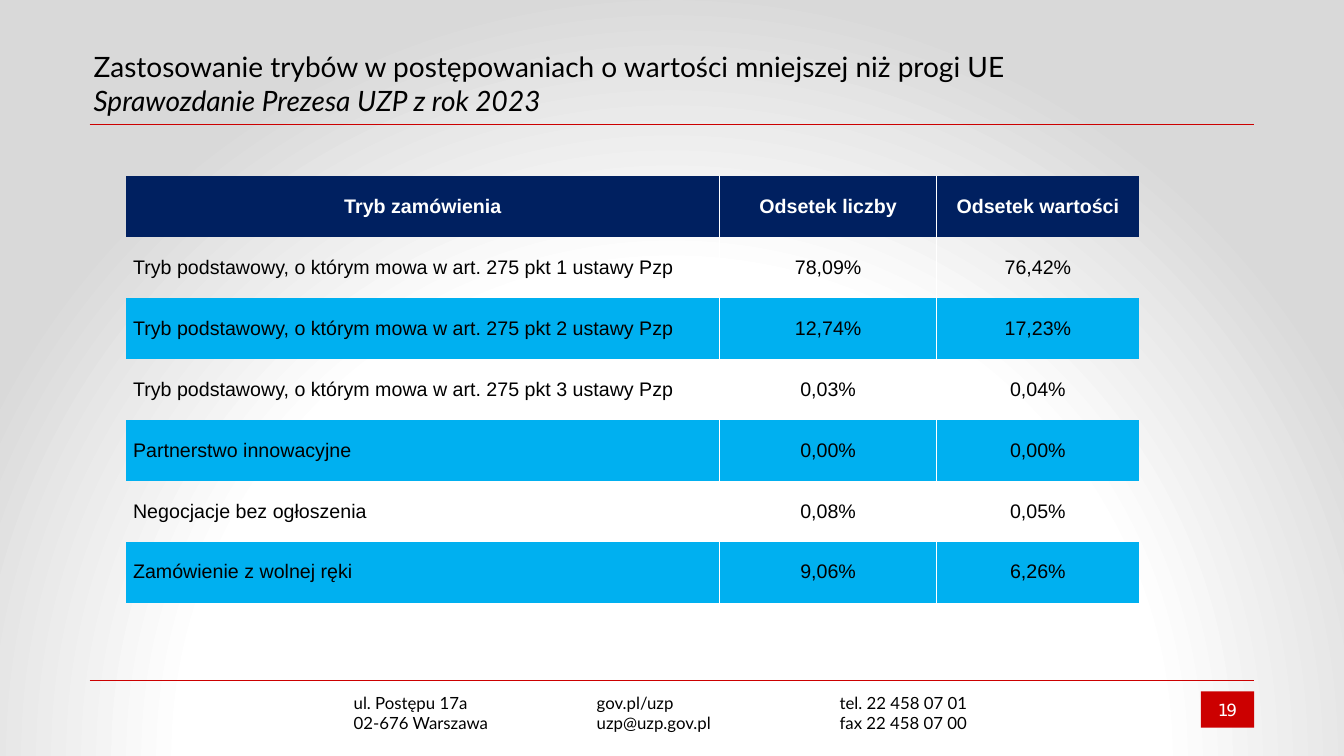
from dataclasses import dataclass

from lxml import etree
from pptx import Presentation
from pptx.dml.color import RGBColor
from pptx.enum.shapes import MSO_CONNECTOR, MSO_SHAPE
from pptx.enum.text import MSO_ANCHOR as Anchor, PP_ALIGN as Align
from pptx.oxml import parse_xml
from pptx.oxml.ns import nsdecls, qn
from pptx.util import Inches, Pt

SLIDE_W, SLIDE_H = 13.33, 7.5
NO_STYLE = "{2D5ABB26-0587-4C30-8999-92F81FD0307C}"


@dataclass(frozen=True)
class Theme:
    red: str = "CC0000"
    navy: str = "002060"
    blue: str = "00B0F0"
    black: str = "000000"
    white: str = "FFFFFF"
    grey: str = "D9D9D9"
    title_font: str = "Lato"
    table_font: str = "Arial"
    number_font: str = "DejaVu Sans"
    title_size: int = 20
    table_size: int = 14
    footer_size: int = 12


THEME = Theme()

TITLE = ["Zastosowanie trybów w postępowaniach o wartości mniejszej niż progi UE",
         "Sprawozdanie Prezesa UZP z rok 2023"]
ROWS = [
    ("Tryb zamówienia", "Odsetek liczby", "Odsetek wartości"),
    ("Tryb podstawowy, o którym mowa w art. 275 pkt 1 ustawy Pzp", "78,09%", "76,42%"),
    ("Tryb podstawowy, o którym mowa w art. 275 pkt 2 ustawy Pzp", "12,74%", "17,23%"),
    ("Tryb podstawowy, o którym mowa w art. 275 pkt 3 ustawy Pzp", "0,03%", "0,04%"),
    ("Partnerstwo innowacyjne", "0,00%", "0,00%"),
    ("Negocjacje bez ogłoszenia", "0,08%", "0,05%"),
    ("Zamówienie z wolnej ręki", "9,06%", "6,26%"),
]
COLUMN_SHARES = (0.586, 0.214, 0.2)
CONTACTS = [
    ("ul. Postępu 17a", "02-676 Warszawa"),
    ("gov.pl/uzp", "uzp@uzp.gov.pl"),
    ("tel. 22 458 07 01", "fax 22 458 07 00"),
]


def style_font(font, name, size, color, bold=False):
    font.name, font.size, font.bold = name, Pt(size), bold
    font.color.rgb = RGBColor.from_string(color)


def add_background(s):
    s.background.fill.gradient()
    grad = s._element.find(".//" + qn("a:gradFill"))
    stops = "".join(
        f'<a:gs pos="{share * 1000}"><a:srgbClr val="{color}"/></a:gs>'
        for share, color in ((0, THEME.white), (63, THEME.white), (100, THEME.grey)))
    grad.getparent().replace(grad, parse_xml(
        f'<a:gradFill {nsdecls("a")} rotWithShape="1"><a:gsLst>{stops}</a:gsLst>'
        '<a:path path="circle"><a:fillToRect l="50000" t="130000" r="50000" b="-30000"/>'
        '</a:path></a:gradFill>'))


def add_rule(s, left, top, width):
    line = s.shapes.add_connector(MSO_CONNECTOR.STRAIGHT, Inches(left), Inches(top),
                                  Inches(left + width), Inches(top))
    line.line.color.rgb = RGBColor.from_string(THEME.red)
    line.line.width = Pt(0.25)
    etree.SubElement(line._element.spPr, qn("a:effectLst"))


def add_lines(s, box, lines, size, anchor=Anchor.TOP):
    sp = s.shapes.add_textbox(*map(Inches, box))
    tf = sp.text_frame
    tf.word_wrap, tf.vertical_anchor = True, anchor
    tf.text = "\n".join(lines)
    for p in tf.paragraphs:
        style_font(p.runs[0].font, THEME.title_font, size, THEME.black)
    return tf


def add_header(s, left, top, width, height):
    margin = 0.06
    tf = add_lines(s, (left - margin, top, width + 2 * margin, height), TITLE,
                   THEME.title_size, Anchor.BOTTOM)
    tf.paragraphs[-1].runs[0].font.italic = True
    add_rule(s, left, top + height + 0.02, width)


def add_side_border(cell, side):
    border = parse_xml(
        f'<a:{side} {nsdecls("a")} w="12700"><a:solidFill><a:srgbClr val="{THEME.white}"/>'
        f'</a:solidFill></a:{side}>')
    cell._tc.get_or_add_tcPr().insert(0, border)


def fill_cell(cell, text, row, col):
    # Header is navy, then rows alternate between clear and blue
    if row and row % 2:
        cell.fill.background()
    else:
        cell.fill.solid()
        cell.fill.fore_color.rgb = RGBColor.from_string(THEME.blue if row else THEME.navy)
    cell.margin_left = cell.margin_right = Inches(0.07)
    cell.margin_top = cell.margin_bottom = 0
    cell.vertical_anchor = Anchor.MIDDLE
    cell.text = text
    p = cell.text_frame.paragraphs[0]
    p.alignment = Align.LEFT if row and col == 0 else Align.CENTER
    style_font(p.runs[0].font, THEME.table_font, THEME.table_size,
               THEME.black if row else THEME.white, bold=row == 0)
    # White lines between columns only; the left line comes first in the cell
    if col < len(COLUMN_SHARES) - 1:
        add_side_border(cell, "lnR")
    if col > 0:
        add_side_border(cell, "lnL")


def add_procedures_table(s, left, top, width, height):
    frame = s.shapes.add_table(len(ROWS), len(COLUMN_SHARES),
                               *map(Inches, (left, top, width, height)))
    table = frame.table
    table.horz_banding = False
    table._tbl.tblPr.find(qn("a:tableStyleId")).text = NO_STYLE
    for column, share in zip(table.columns, COLUMN_SHARES):
        column.width = Inches(width * share)
    for row, values in enumerate(ROWS):
        table.rows[row].height = Inches(height / len(ROWS))
        for col, text in enumerate(values):
            fill_cell(table.cell(row, col), text, row, col)


def add_page_number(s, box, number):
    sp = s.shapes.add_shape(MSO_SHAPE.RECTANGLE, *map(Inches, box))
    sp.shadow.inherit = False
    sp.fill.solid()
    sp.fill.fore_color.rgb = RGBColor.from_string(THEME.red)
    sp.line.fill.background()
    tf = sp.text_frame
    tf.text, tf.vertical_anchor = number, Anchor.MIDDLE
    p = tf.paragraphs[0]
    p.alignment = Align.CENTER
    r = p.runs[0]
    style_font(r.font, THEME.number_font, THEME.footer_size, THEME.white)
    r._r.get_or_add_rPr().set("spc", "-150")


def add_footer(s, left, top, width):
    add_rule(s, left, top, width)
    first, step = 2.52, 2.41
    for i, lines in enumerate(CONTACTS):
        add_lines(s, (left + first + i * step, top + 0.07, 2.2, 0.5), lines,
                  THEME.footer_size)
    add_page_number(s, (left + width - 0.53, top + 0.11, 0.53, 0.36), "19")


def main():
    prs = Presentation()
    prs.slide_width, prs.slide_height = Inches(SLIDE_W), Inches(SLIDE_H)
    s = prs.slides.add_slide(prs.slide_layouts[6])
    left, width = 0.89, 11.55
    add_background(s)
    add_header(s, left, 0.13, width, 1.08)
    add_procedures_table(s, 1.25, 1.75, 10.05, 4.23)
    add_footer(s, left, SLIDE_H * 0.9, width)
    prs.save("out.pptx")


if __name__ == "__main__":
    main()
